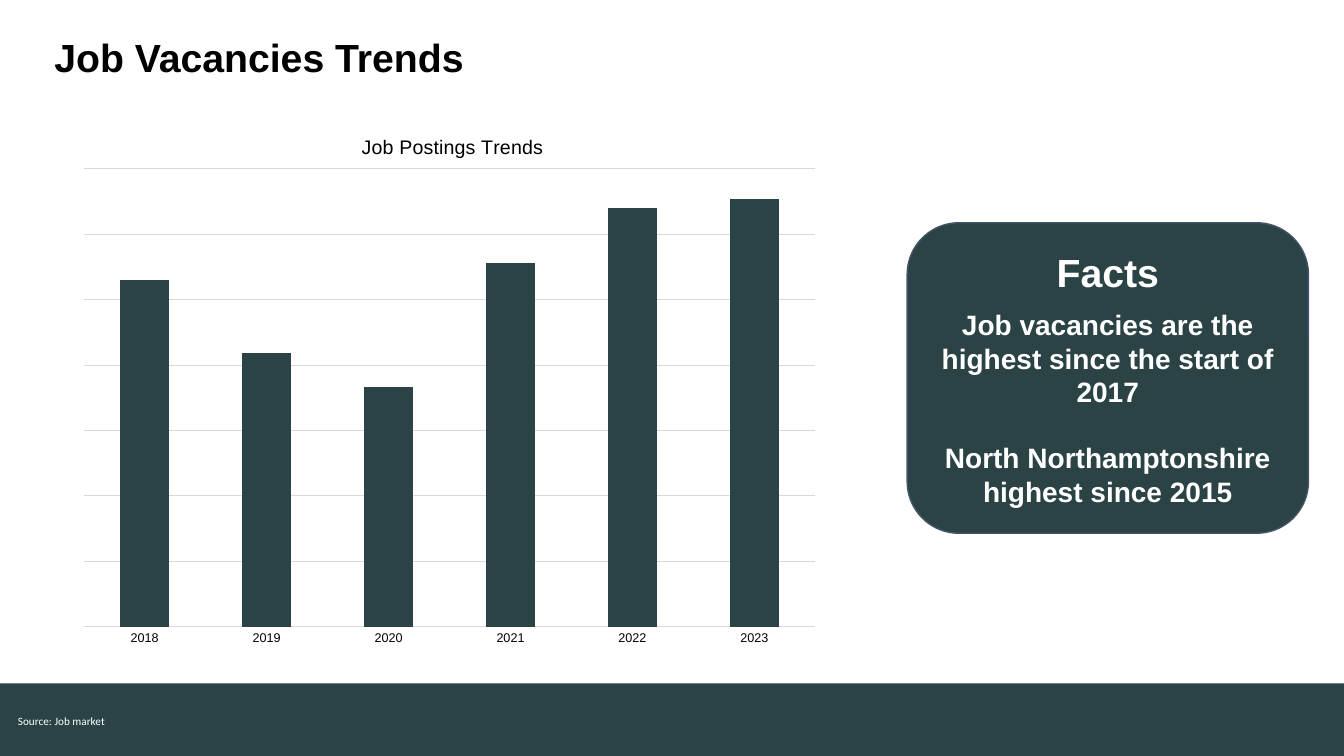
from dataclasses import dataclass

import lxml.etree
import pptx
import pptx.chart.data
import pptx.dml.color
import pptx.enum.chart
import pptx.enum.shapes
import pptx.enum.text
import pptx.oxml.ns
import pptx.util


@dataclass(frozen=True)
class Theme:
    """Hold the colours, fonts and type sizes."""
    dark: str = "2B4345"
    edge: str = "44546A"
    grid: str = "D9D9D9"
    ink: str = "000000"
    pale: str = "FFFFFF"
    sans: str = "Arial"
    note: str = "Calibri"
    head: int = 28
    fact: int = 20
    label: int = 14
    tick: int = 9
    small: int = 8


class Deck:
    """Draw elements on one slide, placed in percent of its size."""

    def __init__(self, theme):
        """Start a slide with only a title."""
        self.theme = theme
        self.file = pptx.Presentation()
        self.file.slide_width = pptx.util.Inches(13.33)
        self.file.slide_height = pptx.util.Inches(7.5)
        self.slide = self.file.slides.add_slide(self.file.slide_layouts[5])

    def place(self, *shares):
        """Turn percent shares into left, top, width and height."""
        sides = (self.file.slide_width, self.file.slide_height) * 2
        return [int(side * share / 100) for side, share in zip(sides, shares)]

    def tint(self, color):
        """Make a colour from its hex code."""
        return pptx.dml.color.RGBColor.from_string(color)

    def font(self, font, size, color, bold=False, name=None):
        """Style a font."""
        font.name = name or self.theme.sans
        font.size = pptx.util.Pt(size)
        font.bold = bold
        font.color.rgb = self.tint(color)

    def line(self, line, color, width):
        """Style a line."""
        line.color.rgb = self.tint(color)
        line.width = pptx.util.Pt(width)

    def title(self, text, area):
        """Fill and move the title."""
        shape = self.slide.shapes.title
        shape.left, shape.top, shape.width, shape.height = self.place(*area)
        frame = shape.text_frame
        frame.text = text
        frame.word_wrap = False
        frame.auto_size = pptx.enum.text.MSO_AUTO_SIZE.SHAPE_TO_FIT_TEXT
        frame.vertical_anchor = pptx.enum.text.MSO_ANCHOR.TOP
        frame.paragraphs[0].alignment = pptx.enum.text.PP_ALIGN.LEFT
        self.font(frame.paragraphs[0].runs[0].font, self.theme.head, self.theme.ink, True)

    def block(self, kind, area, edge=None):
        """Add a dark shape."""
        shape = self.slide.shapes.add_shape(kind, *self.place(*area))
        shape.shadow.inherit = False
        shape.fill.solid()
        shape.fill.fore_color.rgb = self.tint(self.theme.dark)
        if edge:
            self.line(shape.line, edge, 1)
        else:
            shape.line.fill.background()
        return shape

    def card(self, rows, area):
        """Add a round card with rows of text, size and space before."""
        kind = pptx.enum.shapes.MSO_SHAPE.ROUNDED_RECTANGLE
        frame = self.block(kind, area, self.theme.edge).text_frame
        frame.word_wrap = True
        frame.vertical_anchor = pptx.enum.text.MSO_ANCHOR.MIDDLE
        frame.text = "\n".join(text for text, size, gap in rows)
        for para, (text, size, gap) in zip(frame.paragraphs, rows):
            para.alignment = pptx.enum.text.PP_ALIGN.CENTER
            if gap:
                para.space_before = pptx.util.Pt(gap)
            self.font(para.runs[0].font, size, self.theme.pale, True)

    def note(self, text, area):
        """Add a small pale note."""
        frame = self.slide.shapes.add_textbox(*self.place(*area)).text_frame
        frame.word_wrap = True
        frame.text = text
        run = frame.paragraphs[0].runs[0]
        self.font(run.font, self.theme.small, self.theme.pale, name=self.theme.note)

    def layout(self, part, **shares):
        """Fix a chart part at shares of the chart's size."""
        tag = pptx.oxml.ns.qn
        for old in part.findall(tag("c:layout")):
            part.remove(old)
        outer = lxml.etree.Element(tag("c:layout"))
        inner = lxml.etree.SubElement(outer, tag("c:manualLayout"))
        modes = {"xMode": "edge", "yMode": "edge"}
        if "w" in shares:
            modes = {"layoutTarget": "inner", **modes}
        for key, val in {**modes, **shares}.items():
            lxml.etree.SubElement(inner, tag("c:" + key)).set("val", str(val))
        text = part.find(tag("c:tx"))
        if text is None:
            part.insert(0, outer)
        else:
            text.addnext(outer)

    def chart(self, title, names, vals, area):
        """Add a column chart with a title and plain grid."""
        data = pptx.chart.data.CategoryChartData()
        data.categories = names
        data.add_series("Series 1", vals)
        kind = pptx.enum.chart.XL_CHART_TYPE.COLUMN_CLUSTERED
        chart = self.slide.shapes.add_chart(kind, *self.place(*area), data).chart
        self.font(chart.font, 10, self.theme.ink)
        chart.has_legend = False
        frame = chart.chart_title.text_frame
        frame.text = title
        self.font(frame.paragraphs[0].runs[0].font, self.theme.label, self.theme.ink)
        chart.chart_title.include_in_layout = False
        self.layout(chart.chart_title._element, x=0.38, y=0.04)
        self.layout(chart._chartSpace.chart.plotArea, x=0.02, y=0.11, w=0.96, h=0.84)
        plot = chart.plots[0]
        plot.gap_width = 150
        plot.vary_by_categories = False
        fill = plot.series[0].format.fill
        fill.solid()
        fill.fore_color.rgb = self.tint(self.theme.dark)
        base = chart.category_axis
        base.major_tick_mark = pptx.enum.chart.XL_TICK_MARK.NONE
        self.font(base.tick_labels.font, self.theme.tick, self.theme.ink)
        self.line(base.format.line, self.theme.grid, 0.75)
        scale = chart.value_axis
        scale.visible = False
        scale.minimum_scale, scale.maximum_scale, scale.major_unit = 0, 107.1, 15.3
        self.line(scale.major_gridlines.format.line, self.theme.grid, 0.75)


def main():
    """Build and save the slide."""
    theme = Theme()
    deck = Deck(theme)
    deck.block(pptx.enum.shapes.MSO_SHAPE.RECTANGLE, (0, 90.4, 100, 9.6))
    deck.title("Job Vacancies Trends", (3.3, 3.73, 32.33, 7.6))
    facts = [
        ("Facts", theme.head, 0),
        ("Job vacancies are the highest since the start of 2017", theme.fact, 9),
        ("North Northamptonshire highest since 2015", theme.fact, 23),
    ]
    deck.card(facts, (67.5, 29.47, 29.86, 41.07))
    deck.note("Source: Job market", (0.6, 93.87, 45.4, 4.93))
    years = [str(year) for year in range(2018, 2024)]
    vals = [81, 64, 56, 85, 98, 100]
    deck.chart("Job Postings Trends", years, vals, (5.1, 14.4, 56.7, 72.13))
    deck.file.save("out.pptx")


if __name__ == "__main__":
    main()
